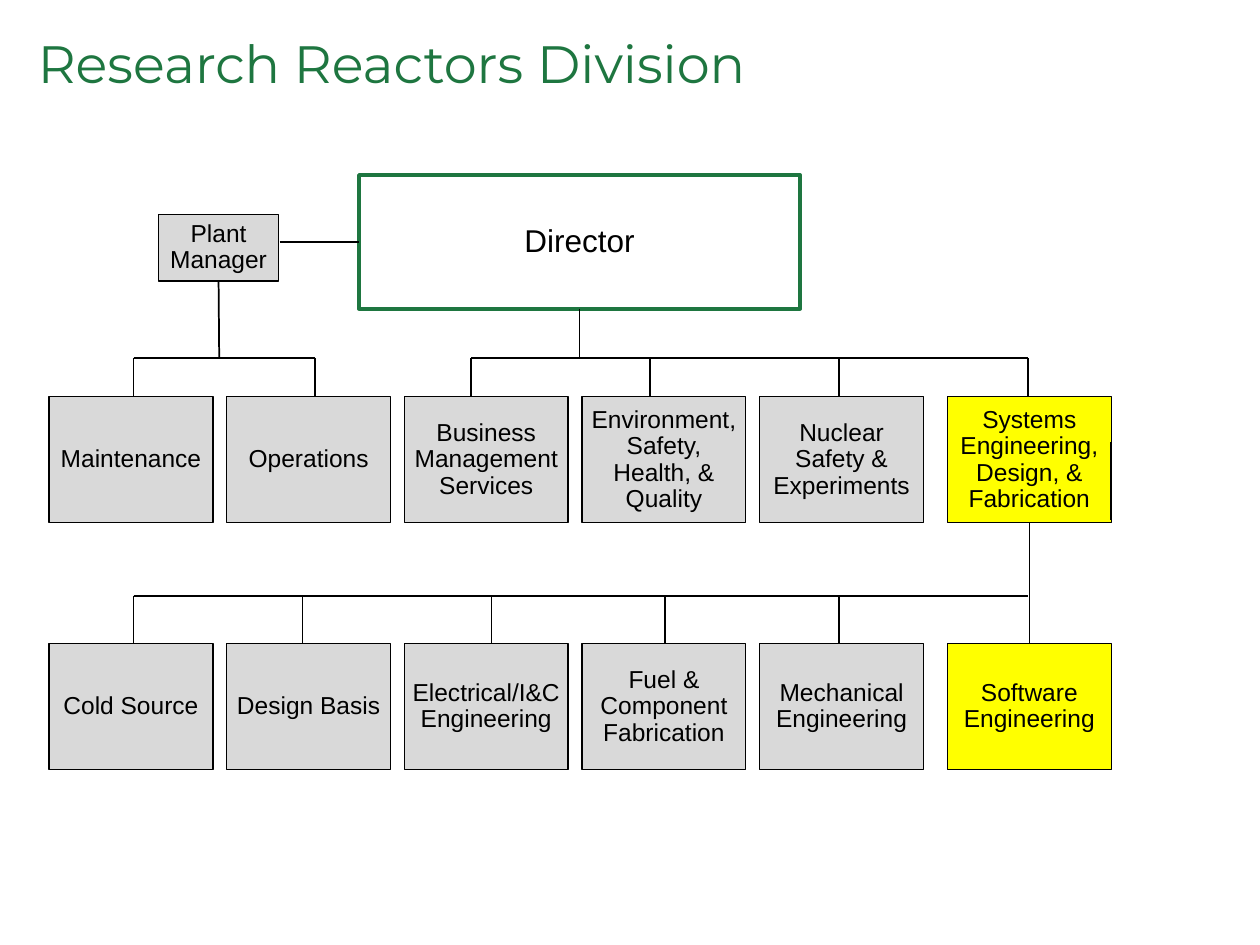
from lxml import etree
from pptx import Presentation
from pptx.dml.color import RGBColor
from pptx.enum.shapes import MSO_CONNECTOR, MSO_SHAPE
from pptx.enum.text import MSO_ANCHOR, MSO_AUTO_SIZE, PP_ALIGN
from pptx.oxml.ns import qn
from pptx.util import Inches, Pt

RECTANGLE = MSO_SHAPE.RECTANGLE
STRAIGHT = MSO_CONNECTOR.STRAIGHT
MIDDLE = MSO_ANCHOR.MIDDLE
GROW = MSO_AUTO_SIZE.SHAPE_TO_FIT_TEXT
LEFT, CENTER = PP_ALIGN.LEFT, PP_ALIGN.CENTER
SIDE_TOP, SIDE_LEFT, SIDE_BOTTOM = 0, 1, 2

GREEN, GREY, YELLOW, BLACK, WHITE = "1E7640", "D9D9D9", "FFFF00", "000000", "FFFFFF"

# Five grey units at an even pitch, then the highlighted unit set apart
UNIT_LEFTS = [0.39 + 1.41 * column for column in range(5)] + [7.52]
UNIT_WIDTH, UNIT_HEIGHT = 1.3, 1.0
DIVISION_TOP, SECTION_TOP = 3.15, 5.11
DIVISION_BUS, SECTION_BUS = 2.84, 4.73
DROP_LENGTH = 0.62

DIVISIONS = ["Maintenance", "Operations", "Business Management Services",
             "Environment, Safety, Health, & Quality",
             "Nuclear Safety & Experiments",
             "Systems Engineering, Design, & Fabrication"]
SECTIONS = ["Cold Source", "Design Basis", "Electrical/I&C Engineering",
            "Fuel & Component Fabrication", "Mechanical Engineering",
            "Software Engineering"]
PLANT_DROPS = [1.06, 2.5]
DIRECTOR_DROPS = [3.74, 5.16, 6.66, 8.16]
SECTION_DROPS = [1.06, 2.4, 3.9, 5.28, 6.66]


def color(hex_string):
    return RGBColor.from_string(hex_string)


def add_line(page, x1, y1, x2, y2):
    line = page.shapes.add_connector(
        STRAIGHT, Inches(x1), Inches(y1), Inches(x2), Inches(y2))
    line.line.color.rgb = color(BLACK)
    line.line.width = Pt(1)
    etree.SubElement(line._element.spPr, qn("a:effectLst"))
    return line


def add_bus(page, drops, y, right=None):
    """Horizontal line with a drop towards each unit below it."""
    for x in drops:
        add_line(page, x, y, x, y + DROP_LENGTH)
    add_line(page, drops[0], y, right or drops[-1], y)


def add_box(page, text, left, top, width, height,
            fill=GREY, outline=BLACK, weight=0.75, size=14):
    box = page.shapes.add_shape(
        RECTANGLE, Inches(left), Inches(top), Inches(width), Inches(height))
    box.shadow.inherit = False
    box.fill.solid()
    box.fill.fore_color.rgb = color(fill)
    box.line.color.rgb = color(outline)
    box.line.width = Pt(weight)
    frame = box.text_frame
    frame.word_wrap = True
    frame.vertical_anchor = MIDDLE
    frame.margin_left = frame.margin_right = Inches(0.05)
    frame.margin_top = frame.margin_bottom = Inches(0.05)
    para = frame.paragraphs[0]
    para.text = text
    para.alignment = CENTER
    para.line_spacing = 0.9
    para.font.name = "Arial"
    para.font.size = Pt(size)
    para.font.color.rgb = color(BLACK)
    return box


def add_unit_row(page, names, top):
    """Row of units; the last one is highlighted and returned."""
    for name, left in zip(names, UNIT_LEFTS):
        fill = YELLOW if name == names[-1] else GREY
        box = add_box(page, name, left, top, UNIT_WIDTH, UNIT_HEIGHT, fill)
    return box


def add_title(page, left, top, width, height):
    title = page.shapes.title
    title.left, title.top = Inches(left), Inches(top)
    title.width, title.height = Inches(width), Inches(height)
    title.text_frame.auto_size = GROW
    para = title.text_frame.paragraphs[0]
    para.text = "Research Reactors Division"
    para.alignment = LEFT
    para.line_spacing = 0.85
    para.font.name = "Montserrat"
    para.font.size = Pt(30)
    para.font.color.rgb = color(GREEN)


def add_leadership(page):
    director = add_box(page, "Director", 2.85, 1.39, 3.5, 1.06,
                       WHITE, GREEN, 2.25, 18)
    manager = add_box(page, "Plant Manager", 1.26, 1.7, 0.95, 0.53)
    add_line(page, 2.22, 1.92, 2.85, 1.92).end_connect(director, SIDE_LEFT)
    add_line(page, 1.74, 2.23, 1.74, DIVISION_BUS).begin_connect(manager, SIDE_BOTTOM)
    add_line(page, 4.6, 2.45, 4.6, DIVISION_BUS).begin_connect(director, SIDE_BOTTOM)


def main():
    deck = Presentation()
    deck.slide_width, deck.slide_height = Inches(10), Inches(7.5)
    page = deck.slides.add_slide(deck.slide_layouts[5])
    add_title(page, 0.2, 0.27, 9.44, 0.53)

    # Branch lines lie behind the boxes
    add_bus(page, PLANT_DROPS, DIVISION_BUS)
    add_bus(page, DIRECTOR_DROPS, DIVISION_BUS)
    add_bus(page, SECTION_DROPS, SECTION_BUS, right=8.16)

    # Boxes
    add_leadership(page)
    systems = add_unit_row(page, DIVISIONS, DIVISION_TOP)
    software = add_unit_row(page, SECTIONS, SECTION_TOP)

    # Link between the highlighted units, and the short edge line
    link = add_line(page, 8.17, 4.15, 8.17, SECTION_TOP)
    link.begin_connect(systems, SIDE_BOTTOM)
    link.end_connect(software, SIDE_TOP)
    add_line(page, 8.82, 3.51, 8.82, 3.51 + DROP_LENGTH)

    deck.save("out.pptx")


if __name__ == "__main__":
    main()
